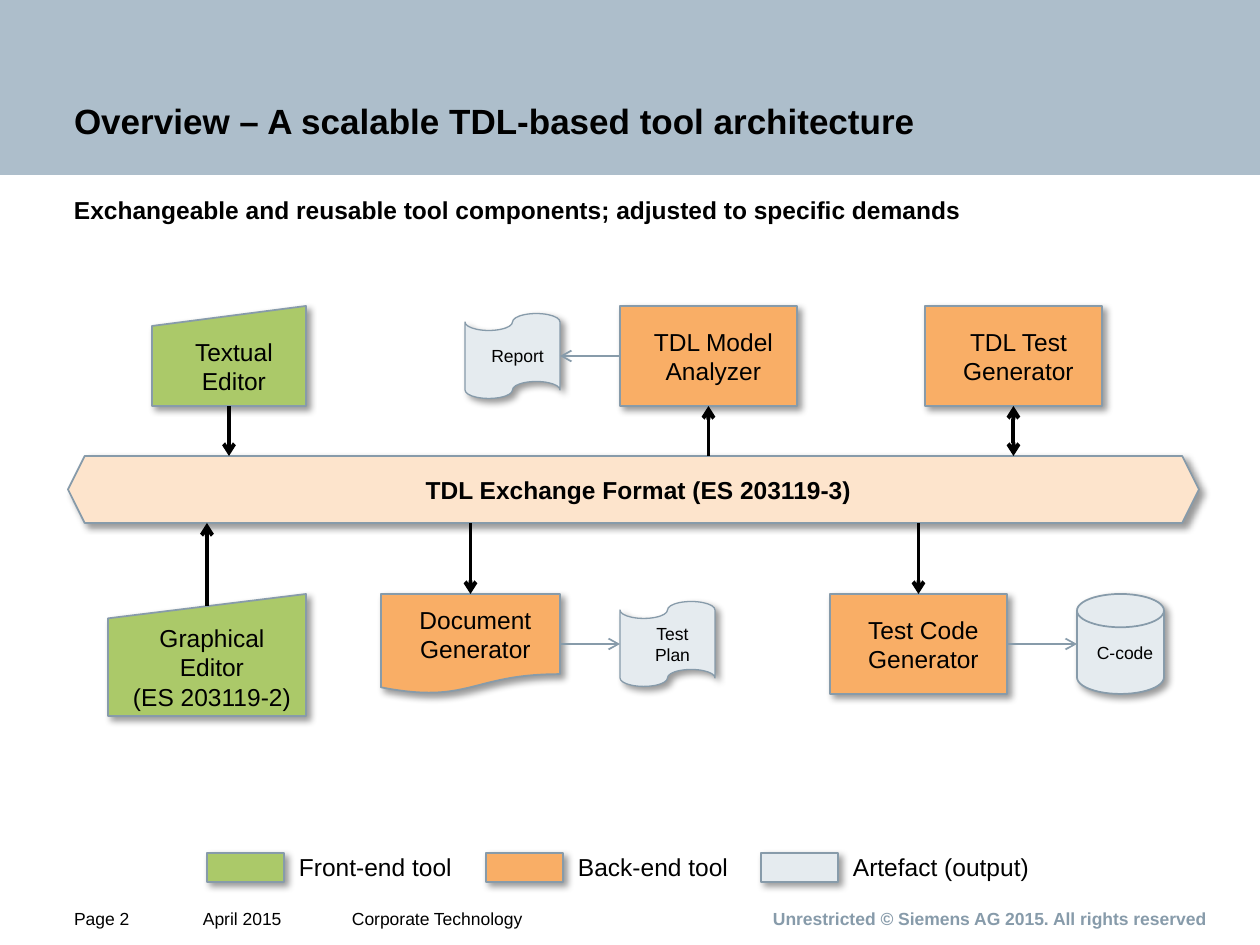
from pptx import Presentation
from pptx.dml.color import RGBColor
from pptx.enum.shapes import MSO_CONNECTOR, MSO_SHAPE as SHAPE
from pptx.enum.text import MSO_ANCHOR as ANCHOR, MSO_AUTO_SIZE, PP_ALIGN as ALIGN
from pptx.oxml.ns import qn
from pptx.util import Emu, Pt
from lxml.etree import SubElement

BLACK, STEEL, BAND = "000000", "879BAA", "ADBECB"
FRONT, BACK, ARTEFACT, BUS = "ABC969", "F9AE66", "E5EBEF", "FDE4CC"
TOP, LEFT, BOTTOM, RIGHT = range(4)


def px(length):
    return Emu(round(length * 914400 / 126))


def color(hex_string):
    return RGBColor.from_string(hex_string)


def write(shape, text, size, bold=False, align=ALIGN.LEFT, anchor=ANCHOR.TOP,
          insets=(0, 0, 0, 0), ink=BLACK, wrap=True):
    frame = shape.text_frame
    frame.text = text
    frame.auto_size = MSO_AUTO_SIZE.NONE
    frame.word_wrap = wrap
    frame.vertical_anchor = anchor
    frame.margin_left, frame.margin_top, frame.margin_right, frame.margin_bottom = map(px, insets)
    for para in frame.paragraphs:
        para.alignment = align
        for span in para.runs:
            span.font.name = "Arial"
            span.font.size = Pt(size)
            span.font.bold = bold
            span.font.color.rgb = color(ink)


def add_label(page, box, text, size, **style):
    label = page.shapes.add_textbox(*map(px, box))
    write(label, text, size, **style)
    return label


def add_node(page, kind, box, fill, text="", size=14, bold=False,
             align=ALIGN.CENTER, line_width=1):
    """A filled, outlined shape with a soft shadow to the lower right."""
    node = page.shapes.add_shape(kind, *map(px, box))
    node.fill.solid()
    node.fill.fore_color.rgb = color(fill)
    node.line.color.rgb = color(STEEL)
    node.line.width = Pt(line_width)
    node.shadow.inherit = False
    effects = node._element.spPr.find(qn("a:effectLst"))
    shadow = SubElement(effects, qn("a:outerShdw"), blurRad="50800", dist="38100",
                        dir="2700000", algn="tl", rotWithShape="0")
    shade = SubElement(shadow, qn("a:srgbClr"), val=BLACK)
    SubElement(shade, qn("a:alpha"), val="40000")
    if text:
        write(node, text, size, bold, align, ANCHOR.MIDDLE, (20, 10, 10, 10))
    return node


def add_arrow(page, start, end, ink=BLACK, width=2.25, ends=("tailEnd",),
              begin_at=None, end_at=None):
    """begin_at and end_at are (shape, side) pairs to join the arrow to."""
    arrow = page.shapes.add_connector(MSO_CONNECTOR.STRAIGHT, *map(px, (*start, *end)))
    if begin_at:
        arrow.begin_connect(*begin_at)
    if end_at:
        arrow.end_connect(*end_at)
    arrow.line.color.rgb = color(ink)
    arrow.line.width = Pt(width)
    for name in ends:
        SubElement(arrow.line._get_or_add_ln(), qn(f"a:{name}"), type="arrow")
    SubElement(arrow._element.spPr, qn("a:effectLst"))


def build_header(page, box):
    left, top, width, height = box
    band = page.shapes.add_shape(SHAPE.RECTANGLE, *map(px, box))
    band.fill.solid()
    band.fill.fore_color.rgb = color(BAND)
    band.line.fill.background()
    band.shadow.inherit = False
    # Bring the title in front of the band
    title = page.shapes.title
    band._element.addnext(title._element)
    title.left, title.top, title.width, title.height = map(px, box)
    write(title, "Overview – A scalable TDL-based tool architecture", 20, True,
          anchor=ANCHOR.BOTTOM, insets=(74, 54, 292, 33))
    add_label(page, (left + 74, top + height + 20, 1131, 31),
              "Exchangeable and reusable tool components; adjusted to specific demands",
              14, bold=True)


def build_architecture(page, box):
    left, top, width, _ = box
    tool_w, tool_h = 177, 100
    bus_top, bus_h = top + 150, 67
    bus_bottom = bus_top + bus_h
    lower = top + 288
    upper_mid, lower_mid = top + tool_h / 2, lower + tool_h / 2
    tape_w, tape_h = 95, 85
    tape_drop = (tool_h - tape_h) / 2

    add_node(page, SHAPE.HEXAGON, (left, bus_top, width, bus_h), BUS,
             "TDL Exchange Format (ES 203119-3)", bold=True)

    # Front-end tools
    graphical_x, graphical_w, graphical_h = left + 40, 198, 122
    add_node(page, SHAPE.FLOWCHART_MANUAL_INPUT, (graphical_x, lower, graphical_w, graphical_h),
             FRONT, "Graphical Editor\n(ES 203119-2)")
    textual = add_node(page, SHAPE.FLOWCHART_MANUAL_INPUT, (left + 84, top, 154, tool_h),
                       FRONT, "Textual Editor")

    # Back-end tools
    document_x, code_x, analyzer_x, test_x = (left + x for x in (313, 762, 552, 857))
    document = add_node(page, SHAPE.FLOWCHART_DOCUMENT, (document_x, lower, 179, tool_h),
                        BACK, "Document Generator")
    code, analyzer, test = (
        add_node(page, SHAPE.FLOWCHART_PROCESS, (x, y, tool_w, tool_h), BACK, text)
        for x, y, text in ((code_x, lower, "Test Code Generator"),
                           (analyzer_x, top, "TDL Model Analyzer"),
                           (test_x, top, "TDL Test Generator")))

    # Artefacts
    report_x, disk_x = left + 397, left + 1009
    report, plan = (
        add_node(page, SHAPE.FLOWCHART_PUNCHED_TAPE, (x, y + tape_drop, tape_w, tape_h),
                 ARTEFACT, text, 10, line_width=0.75)
        for x, y, text in ((report_x, top, "Report"), (analyzer_x, lower, "Test Plan")))
    add_node(page, SHAPE.FLOWCHART_MAGNETIC_DISK, (disk_x, lower, 87, tool_h), ARTEFACT,
             "C-code", 10, align=ALIGN.LEFT)

    # Arrows between the upper tools and the exchange format
    for tool, x, ends in ((textual, left + 161, ("tailEnd",)),
                          (analyzer, analyzer_x + tool_w / 2, ("headEnd",)),
                          (test, test_x + tool_w / 2, ("headEnd", "tailEnd"))):
        add_arrow(page, (x, top + tool_h), (x, bus_top), ends=ends, begin_at=(tool, BOTTOM))

    # Arrows between the exchange format and the lower tools
    for tool, x in ((document, document_x + 179 / 2), (code, code_x + tool_w / 2)):
        add_arrow(page, (x, bus_bottom), (x, lower), end_at=(tool, TOP))
    graphical_mid = graphical_x + graphical_w / 2
    add_arrow(page, (graphical_mid, lower + graphical_h / 10), (graphical_mid, bus_bottom))

    # Thin arrows from tools to their artefacts
    for start, end, begin_at, end_at in (
            ((analyzer_x, upper_mid), (report_x + tape_w, upper_mid),
             (analyzer, LEFT), (report, RIGHT)),
            ((document_x + 179, lower_mid), (analyzer_x, lower_mid),
             (document, RIGHT), (plan, LEFT)),
            ((code_x + tool_w, lower_mid), (disk_x, lower_mid), (code, RIGHT), None)):
        add_arrow(page, start, end, STEEL, 1, begin_at=begin_at, end_at=end_at)


def build_legend(page, box):
    left, top, _, height = box
    for x, fill, text, text_w, line_width in (
            (0, FRONT, "Front-end tool", 154, 1),
            (279, BACK, "Back-end tool", 151, 1),
            (554, ARTEFACT, "Artefact (output)", 176, 0.75)):
        add_node(page, SHAPE.RECTANGLE, (left + x, top, 77, height), fill,
                 line_width=line_width)
        add_label(page, (left + x + 92, top - 1, text_w, 31), text, 14, wrap=False)


def build_footer(page, box):
    left, top, width, height = box
    for x, text_w, text in ((0, 82, "Page 2"), (129, 149, "April 2015"),
                            (278, 277, "Corporate Technology")):
        add_label(page, (left + x, top, text_w, height), text, 10, anchor=ANCHOR.BOTTOM)
    add_label(page, (left + width - 556, top, 556, height),
              "Unrestricted © Siemens AG 2015. All rights reserved", 10, bold=True,
              align=ALIGN.RIGHT, anchor=ANCHOR.BOTTOM, ink=STEEL)


def main():
    deck = Presentation()
    deck.slide_width, deck.slide_height = px(1260), px(945)
    page = deck.slides.add_slide(deck.slide_layouts[5])
    build_header(page, (0, 0, 1260, 175))
    build_architecture(page, (68, 306, 1131, 410))
    build_legend(page, (207, 853, 823, 29))
    build_footer(page, (74, 907, 1132, 22))
    deck.save("out.pptx")


if __name__ == "__main__":
    main()
